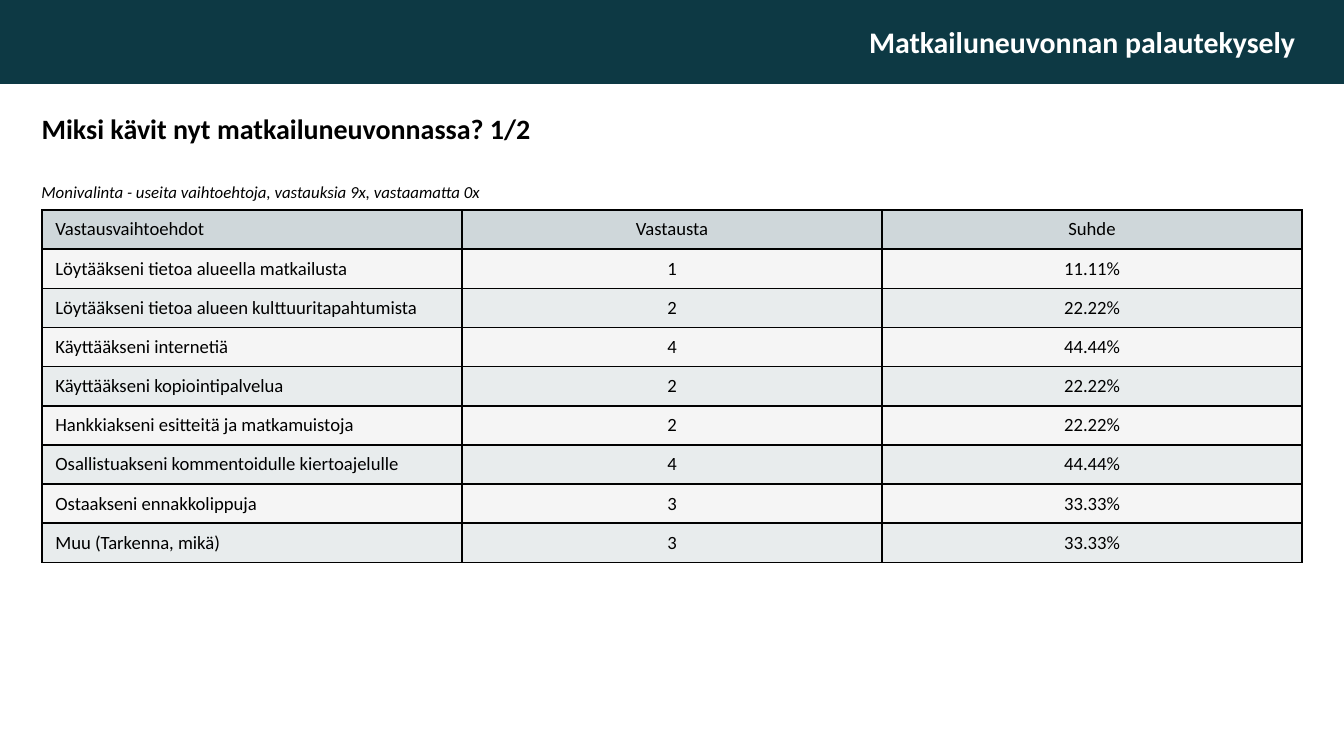
"""Build the visitor survey slide with its answer table."""
from lxml.etree import SubElement
from pptx import Presentation
from pptx.dml.color import RGBColor
from pptx.enum.shapes import MSO_SHAPE as Shape
from pptx.enum.text import MSO_ANCHOR as Anchor, MSO_AUTO_SIZE as Fit, PP_ALIGN as Align
from pptx.oxml.ns import qn
from pptx.util import Inches, Pt

BANNER = "Matkailuneuvonnan palautekysely"
TITLE = "Miksi kävit nyt matkailuneuvonnassa? 1/2"
NOTE = "Monivalinta - useita vaihtoehtoja, vastauksia 9x, vastaamatta 0x"
ROWS = [
    ("Vastausvaihtoehdot", "Vastausta", "Suhde"),
    ("Löytääkseni tietoa alueella matkailusta", "1", "11.11%"),
    ("Löytääkseni tietoa alueen kulttuuritapahtumista", "2", "22.22%"),
    ("Käyttääkseni internetiä", "4", "44.44%"),
    ("Käyttääkseni kopiointipalvelua", "2", "22.22%"),
    ("Hankkiakseni esitteitä ja matkamuistoja", "2", "22.22%"),
    ("Osallistuakseni kommentoidulle kiertoajelulle", "4", "44.44%"),
    ("Ostaakseni ennakkolippuja", "3", "33.33%"),
    ("Muu (Tarkenna, mikä)", "3", "33.33%"),
]

WIDTH = Inches(10)
HEIGHT = WIDTH * 9 // 16
UNIT = WIDTH // 32
FONT = "Calibri"
TEAL = RGBColor(0x0D, 0x39, 0x44)
WHITE = RGBColor(0xFF, 0xFF, 0xFF)
BLACK = RGBColor(0, 0, 0)
HEAD = RGBColor(0xCF, 0xD7, 0xDA)
BANDS = RGBColor(0xE8, 0xEC, 0xED), RGBColor(0xF5, 0xF5, 0xF5)


def write(frame, text, size, color=BLACK, align=Align.LEFT, bold=False, italic=False):
    para = frame.paragraphs[0]
    para.alignment = align
    run = para.add_run()
    run.text = text
    font = run.font
    font.name, font.size, font.bold, font.italic = FONT, Pt(size), bold, italic
    font.color.rgb = color


def border(cell):
    props = cell._tc.get_or_add_tcPr()
    for spot, side in enumerate(("lnL", "lnR", "lnT", "lnB")):
        line = props.makeelement(qn(f"a:{side}"), {"w": str(Pt(1))})
        fill = SubElement(line, qn("a:solidFill"))
        SubElement(fill, qn("a:srgbClr"), val=str(BLACK))
        props.insert(spot, line)


def add_banner(slide):
    bar = slide.shapes.add_shape(Shape.RECTANGLE, 0, 0, WIDTH, 2 * UNIT)
    bar.shadow.inherit = False
    bar.fill.solid()
    bar.fill.fore_color.rgb = TEAL
    bar.line.fill.background()
    frame = bar.text_frame
    frame.vertical_anchor = Anchor.MIDDLE
    frame.margin_right = Inches(0.36)
    write(frame, BANNER, 16, WHITE, Align.RIGHT, bold=True)


def add_title(slide):
    title = slide.shapes.title
    title.left, title.top = Inches(0.21), Inches(0.78)
    title.width, title.height = Inches(9.58), Inches(0.52)
    frame = title.text_frame
    frame.auto_size = Fit.NONE
    frame.vertical_anchor = Anchor.TOP
    write(frame, TITLE, 15, bold=True)


def add_note(slide):
    box = slide.shapes.add_textbox(Inches(0.21), Inches(1.3), Inches(4.17), 2 * UNIT)
    box.text_frame.word_wrap = True
    write(box.text_frame, NOTE, 9, italic=True)


def add_answers(slide):
    count = len(ROWS)
    tall = UNIT * 14 // 15
    frame = slide.shapes.add_table(
        count, len(ROWS[0]), UNIT, 5 * UNIT, 30 * UNIT, count * tall)
    table = frame.table
    for r, row in enumerate(ROWS):
        for c, text in enumerate(row):
            cell = table.cell(r, c)
            cell.vertical_anchor = Anchor.MIDDLE
            cell.margin_left = Inches(0 if c else 0.1)
            cell.margin_right = cell.margin_top = cell.margin_bottom = 0
            cell.fill.solid()
            cell.fill.fore_color.rgb = BANDS[r % 2] if r else HEAD
            border(cell)
            write(cell.text_frame, text, 10, align=Align.CENTER if c else Align.LEFT)


def main():
    deck = Presentation()
    deck.slide_width, deck.slide_height = WIDTH, HEIGHT
    slide = deck.slides.add_slide(deck.slide_layouts.get_by_name("Title Only"))
    add_banner(slide)
    add_note(slide)
    add_answers(slide)
    add_title(slide)
    deck.save("out.pptx")


if __name__ == "__main__":
    main()
